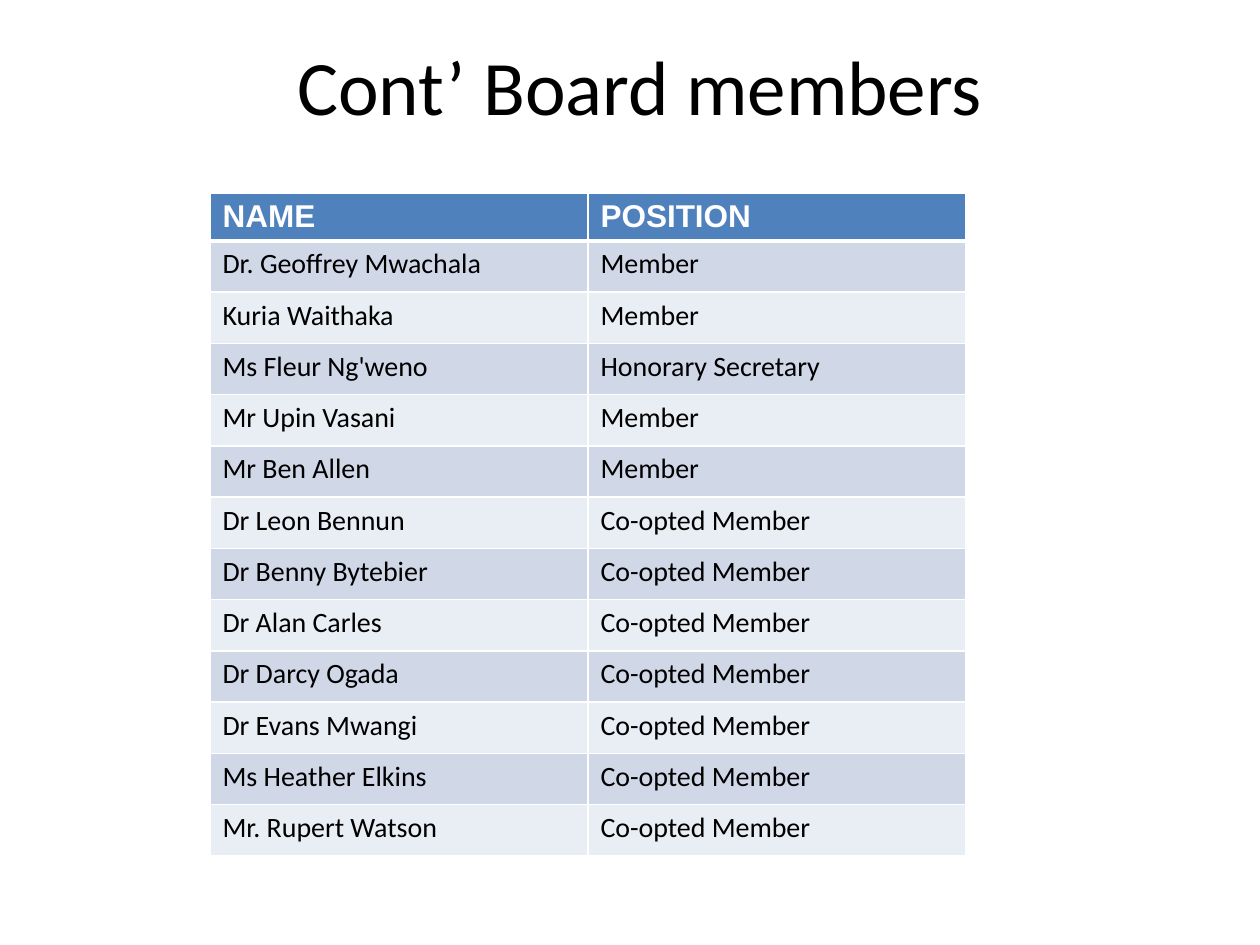
from lxml.etree import SubElement
from pptx import Presentation
from pptx.dml.color import RGBColor
from pptx.enum.text import MSO_ANCHOR, PP_ALIGN
from pptx.oxml.ns import qn
from pptx.util import Emu, Pt

BLACK = RGBColor(0x00, 0x00, 0x00)
WHITE = RGBColor(0xFF, 0xFF, 0xFF)
HEADER_BLUE = RGBColor(0x4F, 0x81, 0xBD)
BANDS = (RGBColor(0xD0, 0xD8, 0xE8), RGBColor(0xE9, 0xED, 0xF4))

HEADINGS = ("NAME", "POSITION")
MEMBERS = [
    ("Dr. Geoffrey Mwachala", "Member"),
    ("Kuria Waithaka", "Member"),
    ("Ms Fleur Ng'weno", "Honorary Secretary"),
    ("Mr Upin Vasani", "Member"),
    ("Mr Ben Allen", "Member"),
    ("Dr Leon Bennun", "Co-opted Member"),
    ("Dr Benny Bytebier", "Co-opted Member"),
    ("Dr Alan Carles", "Co-opted Member"),
    ("Dr Darcy Ogada", "Co-opted Member"),
    ("Dr Evans Mwangi", "Co-opted Member"),
    ("Ms Heather Elkins", "Co-opted Member"),
    ("Mr. Rupert Watson", "Co-opted Member"),
]


def px(length):
    return Emu(round(length * 914400 / 126))


class SlideBuilder:
    body_font = "Calibri"
    header_font = "Arial"

    def __init__(self, presentation):
        self.slide = presentation.slides.add_slide(presentation.slide_layouts[5])

    def style(self, paragraph, name, size, color, bold=False):
        font = paragraph.font
        font.name, font.size, font.bold = name, Pt(size), bold
        font.color.rgb = color

    def title(self, text, left, top, width, height):
        shape = self.slide.shapes.title
        shape.left, shape.top = px(left), px(top)
        shape.width, shape.height = px(width), px(height)
        frame = shape.text_frame
        frame.text = text
        frame.vertical_anchor = MSO_ANCHOR.MIDDLE
        paragraph = frame.paragraphs[0]
        paragraph.alignment = PP_ALIGN.CENTER
        self.style(paragraph, self.body_font, 44, BLACK)

    def borders(self, cell, top, bottom):
        properties = cell._tc.get_or_add_tcPr()
        for side, width in (("L", 1), ("R", 1), ("T", top), ("B", bottom)):
            line = SubElement(properties, qn(f"a:ln{side}"), w=str(Pt(width)))
            fill = SubElement(line, qn("a:solidFill"))
            SubElement(fill, qn("a:srgbClr"), val=str(WHITE))

    def table(self, headings, rows, left, top, width, header_height, body_height):
        frame = self.slide.shapes.add_table(
            len(rows) + 1, len(headings), px(left), px(top),
            px(width), px(header_height + body_height))
        table = frame.table
        for column in table.columns:
            column.width = px(width / len(headings))
        for index, texts in enumerate([headings, *rows]):
            header = index == 0
            table.rows[index].height = px(header_height if header else body_height / len(rows))
            for cell, text in zip(table.rows[index].cells, texts):
                cell.text = text
                paragraph = cell.text_frame.paragraphs[0]
                if header:
                    self.style(paragraph, self.header_font, 18, WHITE, bold=True)
                else:
                    self.style(paragraph, self.body_font, 16, BLACK)
                # A heavier rule separates the header from the body
                self.borders(cell, top=3 if index == 1 else 1, bottom=3 if header else 1)
                cell.fill.solid()
                cell.fill.fore_color.rgb = HEADER_BLUE if header else BANDS[(index - 1) % 2]


def main():
    presentation = Presentation()
    presentation.slide_width, presentation.slide_height = px(1260), px(945)
    builder = SlideBuilder(presentation)

    # Title
    builder.title("Cont’ Board members", 73, 32, 1134, 105)

    # Board members
    builder.table(HEADINGS, MEMBERS, left=210, top=193, width=756,
                  header_height=48, body_height=615)

    presentation.save("out.pptx")


if __name__ == "__main__":
    main()
